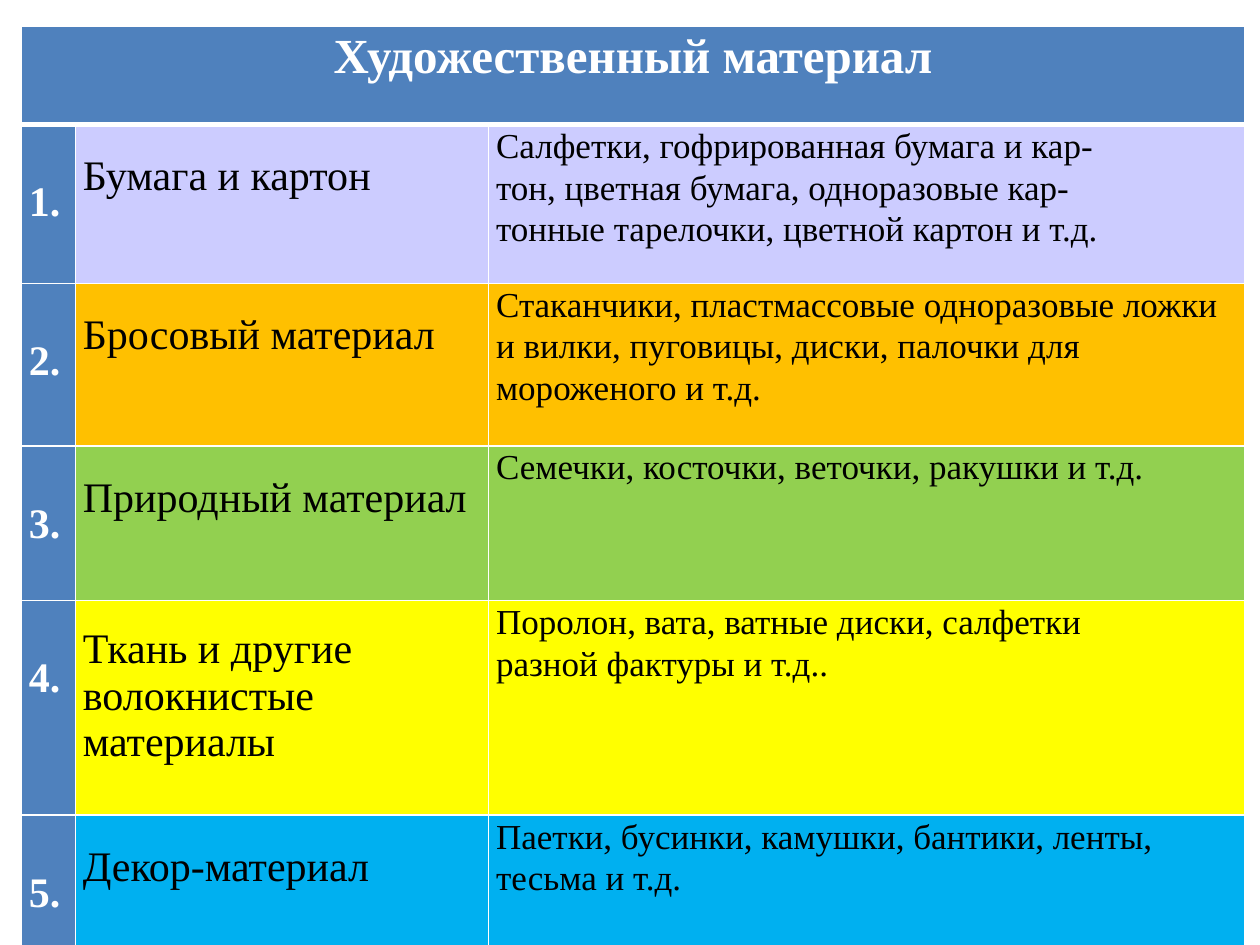
import pptx
import pptx.dml.color
import pptx.enum.text
import pptx.oxml
import pptx.oxml.ns
import pptx.util

Cm = pptx.util.Cm
Pt = pptx.util.Pt
ALIGN = pptx.enum.text.PP_ALIGN

COLORS = {
    "blue": "4F81BD",
    "white": "FFFFFF",
    "black": "000000",
    "lilac": "CCCCFF",
    "orange": "FFC000",
    "green": "92D050",
    "yellow": "FFFF00",
    "sky": "00B0F0",
}
COLUMN_WIDTHS = [1.09, 8.33, 15.24]
HEADER_HEIGHT = 1.98
MATERIALS = [
    ("Бумага и картон",
     ["Салфетки, гофрированная бумага и кар-",
      "тон, цветная бумага, одноразовые кар-",
      "тонные тарелочки, цветной картон и т.д."], "lilac", 3.2, 1.07),
    ("Бросовый материал",
     ["Стаканчики, пластмассовые одноразовые ложки и вилки, пуговицы, "
      "диски, палочки для мороженого и т.д."], "orange", 3.28, 1.07),
    ("Природный материал",
     ["Семечки, косточки, веточки, ракушки и т.д."], "green", 3.12, 1.07),
    ("Ткань и другие волокнистые материалы",
     ["Поролон, вата, ватные диски, салфетки",
      "разной фактуры и т.д.."], "yellow", 4.32, 1),
    ("Декор-материал",
     ["Паетки, бусинки, камушки, бантики, ленты, тесьма и т.д."],
     "sky", 2.69, 1.07),
]


def rgb(name):
    return pptx.dml.color.RGBColor.from_string(COLORS[name])


def write_text(frame, lines, size=20, color="black", bold=False,
               align=ALIGN.LEFT, spacing=1.07):
    frame.word_wrap = True
    for index, line in enumerate(lines):
        paragraph = frame.add_paragraph() if index else frame.paragraphs[0]
        paragraph.alignment = align
        paragraph.line_spacing = spacing
        run = paragraph.add_run()
        run.text = line
        run.font.name = "Times New Roman"
        run.font.size = Pt(size)
        run.font.bold = bold
        run.font.color.rgb = rgb(color)


def add_borders(cell, top=1, bottom=1):
    properties = cell._tc.get_or_add_tcPr()
    for side, width in (("L", 1), ("R", 1), ("T", top), ("B", bottom)):
        properties.append(pptx.oxml.parse_xml(
            f'<a:ln{side} {pptx.oxml.ns.nsdecls("a")} w="{Pt(width)}">'
            f'<a:solidFill><a:srgbClr val="{COLORS["white"]}"/></a:solidFill>'
            f'</a:ln{side}>'))


def fill_cell(cell, lines, fill, offset=0, top=1, bottom=1, **text_format):
    add_borders(cell, top, bottom)
    cell.fill.solid()
    cell.fill.fore_color.rgb = rgb(fill)
    cell.margin_left = cell.margin_right = Cm(0.15)
    cell.margin_top = Cm(offset)
    cell.margin_bottom = 0
    write_text(cell.text_frame, lines, **text_format)


def add_material_table(slide):
    heights = [HEADER_HEIGHT] + [material[3] for material in MATERIALS]
    table = slide.shapes.add_table(
        len(heights), len(COLUMN_WIDTHS), Cm(0.43), Cm(0.53),
        Cm(sum(COLUMN_WIDTHS)), Cm(sum(heights))).table
    for column, width in zip(table.columns, COLUMN_WIDTHS):
        column.width = Cm(width)
    for row, height in zip(table.rows, heights):
        row.height = Cm(height)
    return table


def fill_header(table):
    title = table.cell(0, 0)
    title.merge(table.cell(0, len(COLUMN_WIDTHS) - 1))
    fill_cell(title, ["Художественный материал"], "blue", bottom=3,
              size=28, color="white", bold=True, align=ALIGN.CENTER)
    for column in range(1, len(COLUMN_WIDTHS)):
        add_borders(table.cell(0, column), bottom=3)


def fill_material(table, number, material):
    name, examples, fill, _, spacing = material
    top = 3 if number == 1 else 1
    fill_cell(table.cell(number, 0), [f"{number}."], "blue", offset=1.04,
              top=top, size=24, color="white", bold=True)
    fill_cell(table.cell(number, 1), [name], fill, offset=0.52,
              top=top, size=24, spacing=spacing)
    fill_cell(table.cell(number, 2), examples, fill, top=top)


def main():
    presentation = pptx.Presentation()
    presentation.slide_width = Cm(25.4)
    presentation.slide_height = Cm(19.05)
    slide = presentation.slides.add_slide(presentation.slide_layouts[6])
    table = add_material_table(slide)
    fill_header(table)
    for number, material in enumerate(MATERIALS, start=1):
        fill_material(table, number, material)
    presentation.save("out.pptx")


if __name__ == "__main__":
    main()
